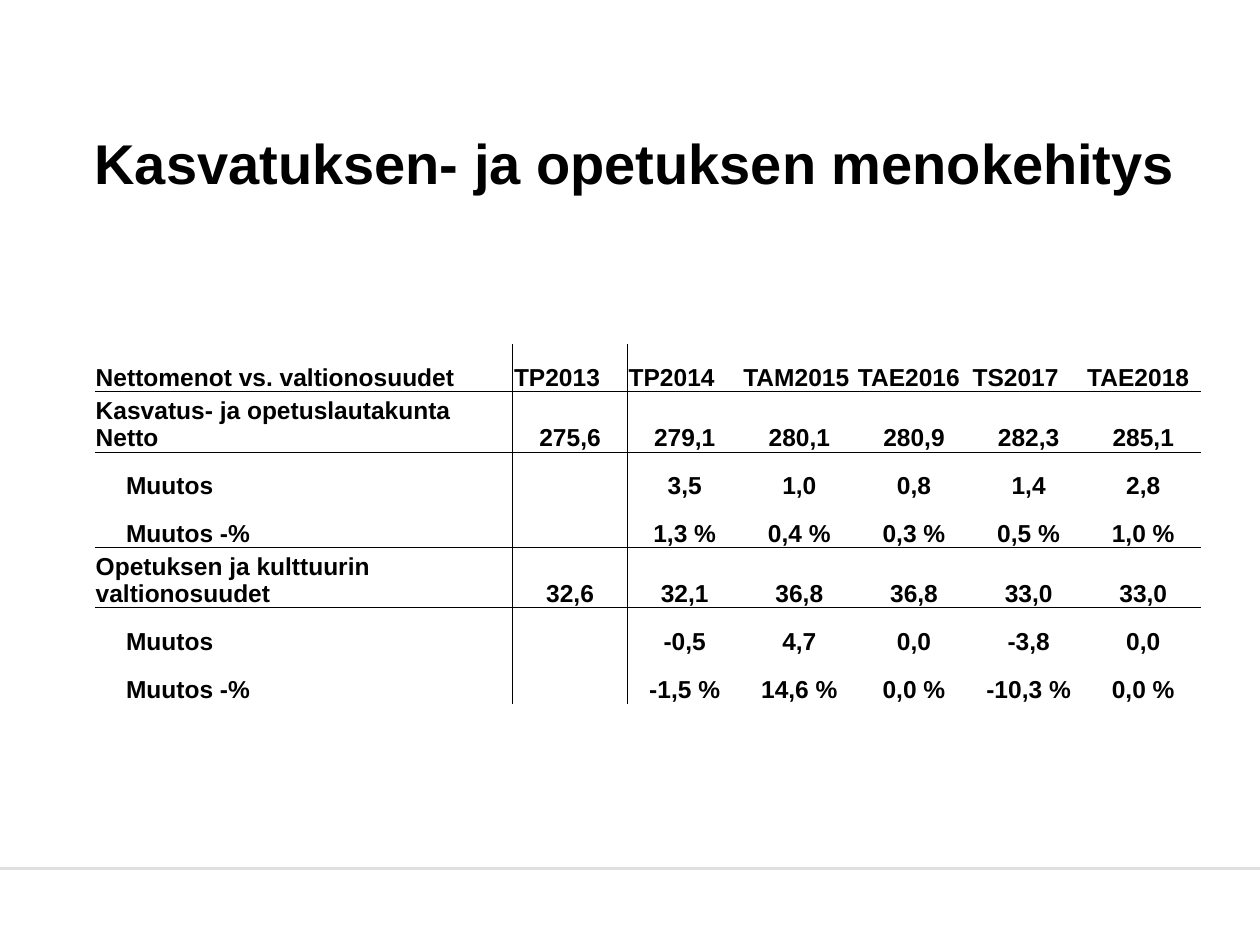
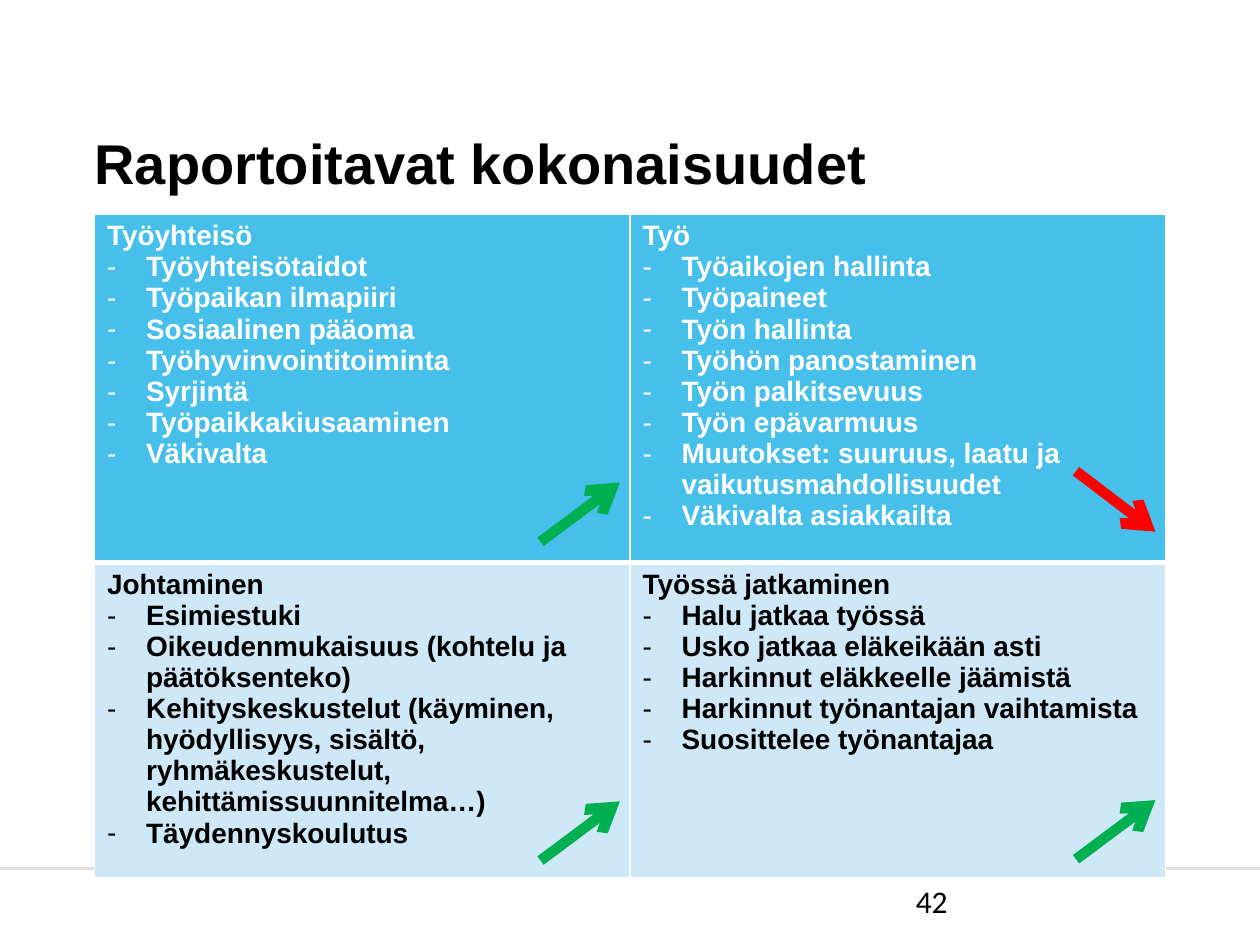
from dataclasses import dataclass

from lxml import etree
from pptx import Presentation
from pptx.dml.color import RGBColor
from pptx.enum.shapes import MSO_CONNECTOR, MSO_SHAPE
from pptx.enum.text import MSO_ANCHOR, PP_ALIGN
from pptx.oxml.ns import qn
from pptx.util import Inches, Pt

STRAIGHT = MSO_CONNECTOR.STRAIGHT
RECTANGLE = MSO_SHAPE.RECTANGLE
TOP, BOTTOM = MSO_ANCHOR.TOP, MSO_ANCHOR.BOTTOM
LEFT, CENTER = PP_ALIGN.LEFT, PP_ALIGN.CENTER
NO_TABLE_STYLE = "{2D5ABB26-0587-4C30-8999-92F81FD0307C}"


@dataclass(frozen=True)
class Theme:
    black: str = "000000"
    white: str = "FFFFFF"
    rule: str = "DFDFDF"
    blue: str = "46BFEA"
    pale_blue: str = "CFE8F7"
    rising: str = "00B050"
    falling: str = "FF0000"
    font: str = "Arial"
    number_font: str = "Calibri"
    title_size: int = 32
    number_size: int = 18
    topic_size: int = 16
    figure_size: int = 14


THEME = Theme()


def rgb(color):
    return RGBColor.from_string(color)


def write(frame, text, size, color=THEME.black, font=THEME.font, bold=True,
          align=LEFT, line_spacing=None, dash=False, first=True):
    """Write one paragraph; first=False adds it after the earlier ones."""
    para = frame.paragraphs[0] if first else frame.add_paragraph()
    para.alignment = align
    if line_spacing:
        para.line_spacing = Pt(line_spacing)
    if dash:
        properties = para._p.get_or_add_pPr()
        properties.set("marL", str(Inches(0.31)))
        properties.set("indent", str(-Inches(0.31)))
        etree.SubElement(properties, qn("a:buFont"), typeface=font)
        etree.SubElement(properties, qn("a:buChar"), char="-")
    span = para.add_run()
    span.text = text
    span.font.name, span.font.size, span.font.bold = font, Pt(size), bold
    span.font.color.rgb = rgb(color)


class Deck:
    """The theme, the presentation and the current page."""

    def __init__(self, theme):
        self.theme = theme
        self.presentation = Presentation()
        self.presentation.slide_width = Inches(10)
        self.presentation.slide_height = Inches(7.5)
        self.page = None

    def new_page(self, title, title_width=8.5):
        self.page = self.presentation.slides.add_slide(self.presentation.slide_layouts[6])
        self.footer()
        self.text(title, 0.75, 0.68, title_width, 0.87, margins=(0, 0, 0, 0),
                  anchor=BOTTOM, size=self.theme.title_size, line_spacing=33)

    def footer(self):
        band = self.page.shapes.add_shape(RECTANGLE, 0, Inches(6.9), Inches(10), Inches(0.6))
        band.shadow.inherit = False
        band.fill.solid()
        band.fill.fore_color.rgb = rgb(self.theme.white)
        band.line.fill.background()
        self.line((0, 6.89), (10, 6.89), self.theme.rule, 1.75)

    def text(self, text, left, top, width, height, margins=(0.1, 0.05, 0.1, 0.05),
             anchor=TOP, **style):
        box = self.page.shapes.add_textbox(Inches(left), Inches(top),
                                           Inches(width), Inches(height))
        frame = box.text_frame
        frame.word_wrap = True
        frame.vertical_anchor = anchor
        (frame.margin_left, frame.margin_top,
         frame.margin_right, frame.margin_bottom) = map(Inches, margins)
        write(frame, text, **style)

    def line(self, start, end, color, width, arrow=False):
        connector = self.page.shapes.add_connector(STRAIGHT, *map(Inches, start + end))
        connector.line.color.rgb = rgb(color)
        connector.line.width = Pt(width)
        if arrow:
            etree.SubElement(connector.line._get_or_add_ln(), qn("a:tailEnd"), type="arrow")
        etree.SubElement(connector._element.spPr, qn("a:effectLst"))

    def table(self, left, top, column_widths, row_heights):
        frame = self.page.shapes.add_table(
            len(row_heights), len(column_widths), Inches(left), Inches(top),
            Inches(sum(column_widths)), Inches(sum(row_heights)))
        table = frame.table
        table.first_row = table.horz_banding = False
        table._tbl.tblPr.find(qn("a:tableStyleId")).text = NO_TABLE_STYLE
        for column, width in zip(table.columns, column_widths):
            column.width = Inches(width)
        for row, height in zip(table.rows, row_heights):
            row.height = Inches(height)
        return table

    def cell(self, cell, margins, borders, fill=None, anchor=TOP):
        """Format a cell; borders maps the sides L, R, T, B to (colour, points)."""
        (cell.margin_left, cell.margin_top,
         cell.margin_right, cell.margin_bottom) = map(Inches, margins)
        cell.vertical_anchor = anchor
        properties = cell._tc.get_or_add_tcPr()
        for side in "LRTB":
            if side in borders:
                color, width = borders[side]
                edge = etree.SubElement(properties, qn(f"a:ln{side}"), w=str(Pt(width)))
                paint = etree.SubElement(edge, qn("a:solidFill"))
                etree.SubElement(paint, qn("a:srgbClr"), val=color)
        if fill:
            cell.fill.solid()
            cell.fill.fore_color.rgb = rgb(fill)
        else:
            cell.fill.background()


EXPENSES = [
    ["Nettomenot vs. valtionosuudet",
     "TP2013", "TP2014", "TAM2015", "TAE2016", "TS2017", "TAE2018"],
    ["Kasvatus- ja opetuslautakunta Netto",
     "275,6", "279,1", "280,1", "280,9", "282,3", "285,1"],
    ["Muutos", "", "3,5", "1,0", "0,8", "1,4", "2,8"],
    ["Muutos -%", "", "1,3 %", "0,4 %", "0,3 %", "0,5 %", "1,0 %"],
    ["Opetuksen ja kulttuurin valtionosuudet",
     "32,6", "32,1", "36,8", "36,8", "33,0", "33,0"],
    ["Muutos", "", "-0,5", "4,7", "0,0", "-3,8", "0,0"],
    ["Muutos -%", "", "-1,5 %", "14,6 %", "0,0 %", "-10,3 %", "0,0 %"],
]
RULED_ROWS = (0, 3)

TOPICS = [
    [["Työyhteisö", "Työyhteisötaidot", "Työpaikan ilmapiiri", "Sosiaalinen pääoma",
      "Työhyvinvointitoiminta", "Syrjintä", "Työpaikkakiusaaminen", "Väkivalta"],
     ["Työ", "Työaikojen hallinta", "Työpaineet", "Työn hallinta", "Työhön panostaminen",
      "Työn palkitsevuus", "Työn epävarmuus",
      "Muutokset: suuruus, laatu ja vaikutusmahdollisuudet", "Väkivalta asiakkailta"]],
    [["Johtaminen", "Esimiestuki", "Oikeudenmukaisuus (kohtelu ja päätöksenteko)",
      "Kehityskeskustelut (käyminen, hyödyllisyys, sisältö, ryhmäkeskustelut, "
      "kehittämissuunnitelma…)", "Täydennyskoulutus"],
     ["Työssä jatkaminen", "Halu jatkaa työssä", "Usko jatkaa eläkeikään asti",
      "Harkinnut eläkkeelle jäämistä", "Harkinnut työnantajan vaihtamista",
      "Suosittelee työnantajaa"]],
]


def expense_page(deck):
    deck.new_page("Kasvatuksen- ja opetuksen menokehitys", title_width=9.02)
    table = deck.table(0.75, 2.73, [3.32] + [0.91] * 6, [0.38] * len(EXPENSES))
    thin = (THEME.black, 0.5)
    for row, values in enumerate(EXPENSES):
        for column, value in enumerate(values):
            # Rules under the ruled rows and after the label column
            sides = {"L": column == 1, "R": column == 0,
                     "T": row - 1 in RULED_ROWS, "B": row in RULED_ROWS}
            borders = {side: thin for side, drawn in sides.items() if drawn}
            indent = 0.25 if value.startswith("Muutos") else 0.01
            cell = table.cell(row, column)
            deck.cell(cell, (indent, 0.01, 0.01, 0), borders, anchor=BOTTOM)
            if value:
                write(cell.text_frame, value, THEME.figure_size,
                      align=CENTER if row and column else LEFT)


def topic_page(deck):
    deck.new_page("Raportoitavat kokonaisuudet")
    deck.text("42", 7.17, 6.95, 2.33, 0.4, size=THEME.number_size,
              font=THEME.number_font, bold=False)

    # Four topic areas
    table = deck.table(0.75, 1.7, [4.25] * 2, [2.4] * 2)
    thin, thick = (THEME.white, 1), (THEME.white, 3)
    looks = [(THEME.blue, THEME.white, {"T": thin, "B": thick}),
             (THEME.pale_blue, THEME.black, {"T": thick, "B": thin})]
    for row, (fill, color, edges) in enumerate(looks):
        for column, lines in enumerate(TOPICS[row]):
            cell = table.cell(row, column)
            deck.cell(cell, (0.1, 0.05, 0.1, 0.05), {"L": thin, "R": thin, **edges}, fill)
            for index, line in enumerate(lines):
                write(cell.text_frame, line, THEME.topic_size, color,
                      dash=index > 0, first=index == 0)

    # Trend arrows
    for left, start, end, color in [(4.29, 4.3, 3.83, THEME.rising),
                                    (4.29, 6.83, 6.36, THEME.rising),
                                    (8.54, 6.82, 6.35, THEME.rising),
                                    (8.54, 3.74, 4.22, THEME.falling)]:
        deck.line((left, start), (left + 0.63, end), color, 6, arrow=True)


def main():
    deck = Deck(THEME)
    expense_page(deck)
    topic_page(deck)
    deck.presentation.save("out.pptx")


if __name__ == "__main__":
    main()
